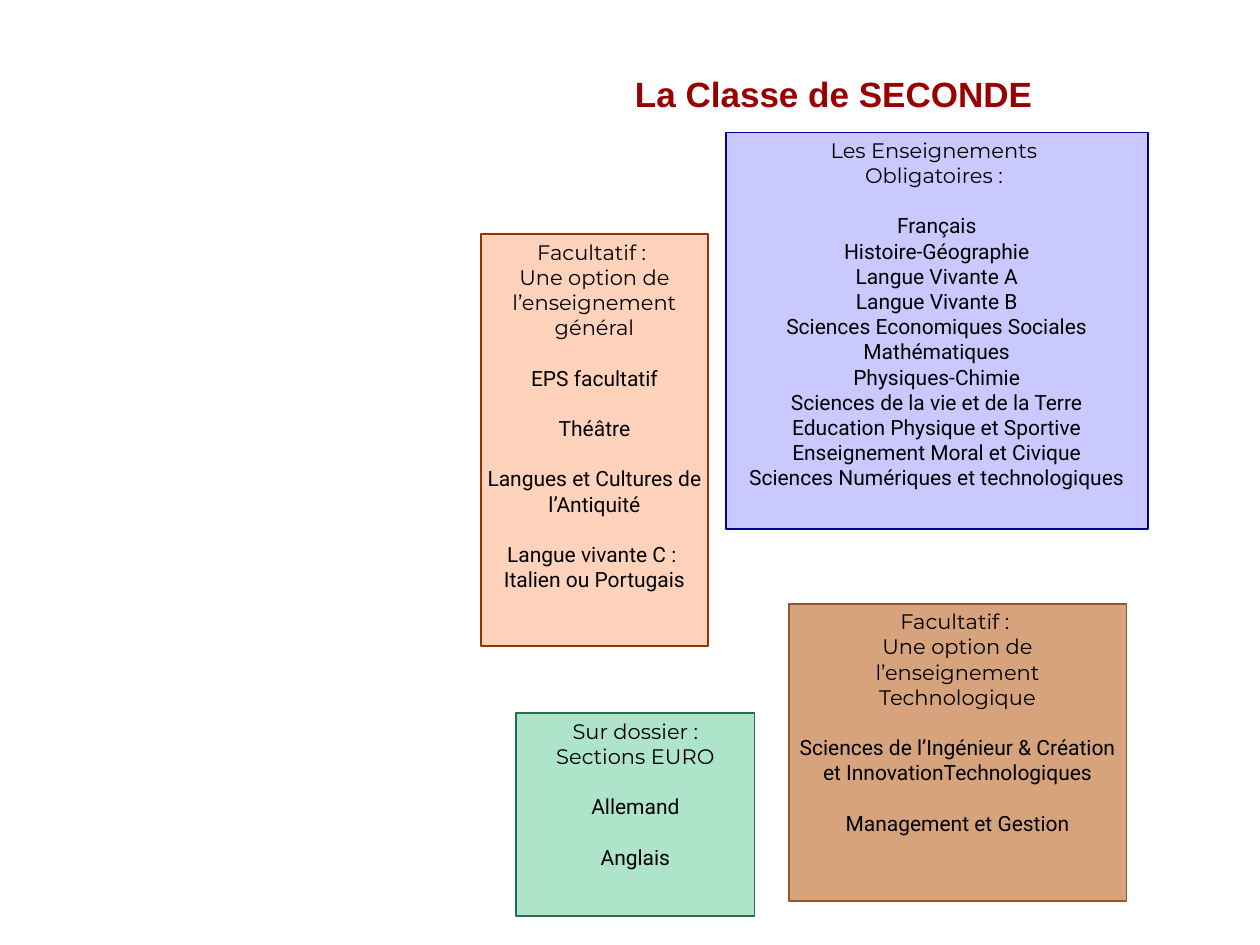
from pptx import Presentation
from pptx import util as u
from pptx.dml.color import RGBColor
from pptx.enum import shapes, text

THEME = {
    "title": {"name": "Arial", "size": u.Pt(20), "bold": True, "color": "990000"},
    "heading": {"name": "Montserrat", "size": u.Pt(12), "color": "000000"},
    "subject": {"name": "Roboto", "size": u.Pt(12), "color": "000000"},
    "line_pitch": u.Pt(14.4),
    "border": u.Pt(1),
    "inset": u.Cm(0.1),
}

TITLE = "La Classe de SECONDE"
TITLE_AT = (12.7, 1.37, 9.3, 1.98)

# Each box: place in cm, fill, border, heading lines, groups of subjects
BOXES = [
    {"at": (14.63, 2.67, 8.51, 8), "fill": "C9C9FF", "line": "000092",
     "heading": ["Les Enseignements ", "Obligatoires : "],
     "groups": [["Français", "Histoire-Géographie", "Langue Vivante A",
                 "Langue Vivante B", "Sciences Economiques Sociales",
                 "Mathématiques", "Physiques-Chimie",
                 "Sciences de la vie et de la Terre",
                 "Education Physique et Sportive",
                 "Enseignement Moral et Civique",
                 "Sciences Numériques et technologiques"]]},
    {"at": (9.7, 4.72, 4.57, 8.31), "fill": "FFD2BB", "line": "983300",
     "heading": ["Facultatif : ", "Une option de", "l’enseignement", "général"],
     "groups": [["EPS facultatif"], ["Théâtre"],
                ["Langues et Cultures de l’Antiquité"],
                ["Langue vivante C : ", "Italien ou Portugais"]]},
    {"at": (15.9, 12.17, 6.81, 5.99), "fill": "D6A37C", "line": "91582D",
     "heading": ["Facultatif : ", "Une option de", "l’enseignement", "Technologique"],
     "groups": [["Sciences de l’Ingénieur & Création et InnovationTechnologiques"],
                ["Management et Gestion"]]},
    {"at": (10.41, 14.38, 4.8, 4.09), "fill": "AEE4C9", "line": "256F4A",
     "heading": ["Sur dossier :", "Sections EURO"],
     "groups": [["Allemand"], ["Anglais"]]},
]


def set_attrs(obj, values):
    for name, value in values.items():
        setattr(obj, name, value)


def set_font(font, style):
    set_attrs(font, {k: v for k, v in style.items() if k != "color"})
    font.color.rgb = RGBColor.from_string(style["color"])


def place(sp, at):
    set_attrs(sp, dict(zip(("left", "top", "width", "height"), map(u.Cm, at))))


def set_frame(tf):
    sides = ("left", "right", "top", "bottom")
    set_attrs(tf, {f"margin_{side}": THEME["inset"] for side in sides})
    set_attrs(tf, {"word_wrap": True, "auto_size": text.MSO_AUTO_SIZE.NONE,
                   "vertical_anchor": text.MSO_ANCHOR.TOP})


def add_box(slide, box):
    sp = slide.shapes.add_shape(shapes.MSO_SHAPE.RECTANGLE, *map(u.Cm, box["at"]))
    sp.shadow.inherit = False
    sp.fill.solid()
    sp.fill.fore_color.rgb = RGBColor.from_string(box["fill"])
    sp.line.color.rgb = RGBColor.from_string(box["line"])
    sp.line.width = THEME["border"]
    tf = sp.text_frame
    set_frame(tf)

    # One empty line's height separates the groups
    pitch = THEME["line_pitch"]
    p = None
    for n, group in enumerate([box["heading"], *box["groups"]]):
        for i, line in enumerate(group):
            p = tf.add_paragraph() if p else tf.paragraphs[0]
            set_attrs(p, {"alignment": text.PP_ALIGN.CENTER, "line_spacing": pitch,
                          "space_before": pitch if n and i == 0 else u.Pt(0)})
            r = p.add_run()
            r.text = line
            set_font(r.font, THEME["subject" if n else "heading"])


def main():
    prs = Presentation()
    set_attrs(prs, {"slide_width": u.Cm(25.4), "slide_height": u.Cm(19.05)})
    slide = prs.slides.add_slide(prs.slide_layouts[5])

    # Title
    title = slide.shapes.title
    place(title, TITLE_AT)
    set_frame(title.text_frame)
    p = title.text_frame.paragraphs[0]
    p.alignment = text.PP_ALIGN.LEFT
    r = p.add_run()
    r.text = TITLE
    set_font(r.font, THEME["title"])

    # Boxes of subjects
    for box in BOXES:
        add_box(slide, box)

    prs.save("out.pptx")


if __name__ == "__main__":
    main()
